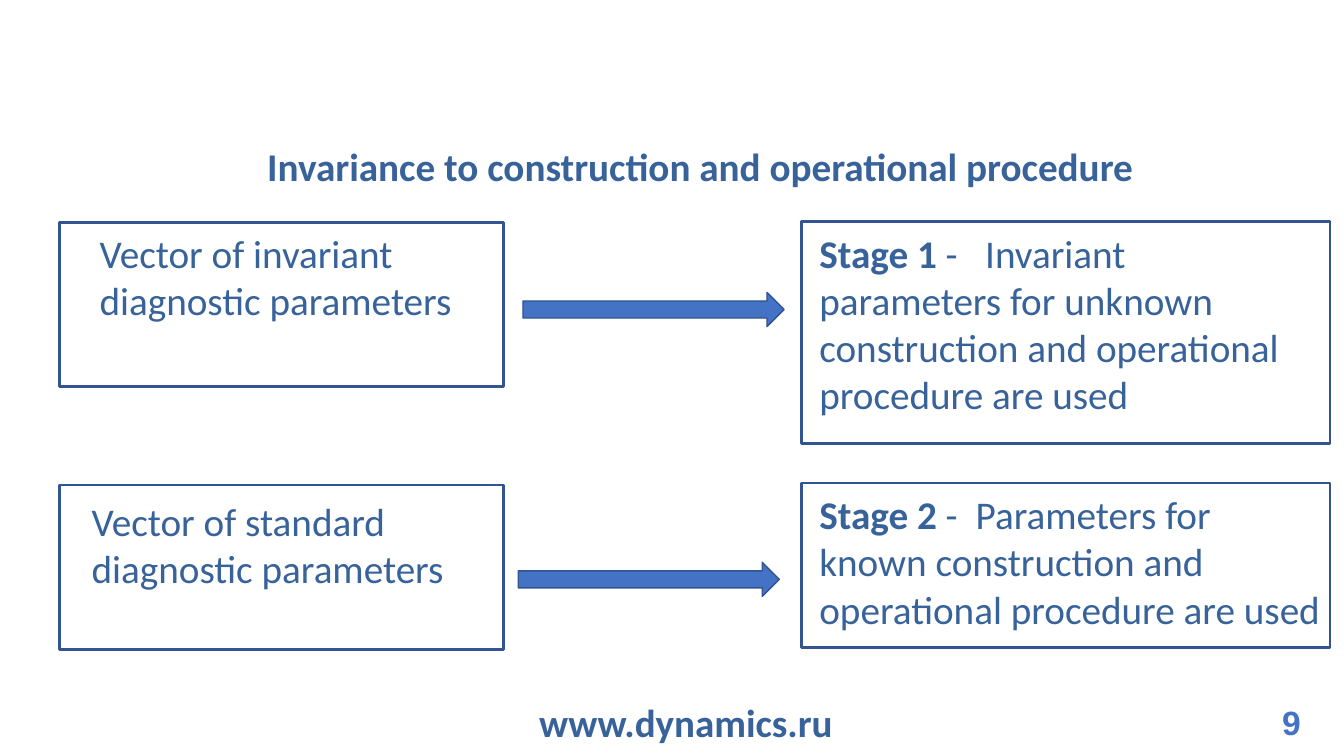
import pptx
import pptx.util
import pptx.dml.color
import pptx.enum.shapes
import pptx.enum.text
import lxml.etree
from pptx.util import Cm, Pt

NAVY, BLUE, OUTLINE, WHITE = "38629A", "4472C4", "325491", "FFFFFF"
BODY = {"name": "Calibri", "size": Pt(28), "bold": False}
HEAVY = {**BODY, "bold": True}


def paint(color_format, hex_value):
    color_format.rgb = pptx.dml.color.RGBColor.from_string(hex_value)


def add_words(paragraph, words, style, color=NAVY):
    run = paragraph.add_run()
    run.text = words
    for attribute, value in style.items():
        setattr(run.font, attribute, value)
    paint(run.font.color, color)


deck = pptx.Presentation()
deck.slide_width, deck.slide_height = Cm(33.87), Cm(19.05)
slide = deck.slides.add_slide(deck.slide_layouts[5])
shapes = slide.shapes

# Frames and block arrows: preset, left, top, width, height, fill, line width
frame = pptx.enum.shapes.MSO_SHAPE.RECTANGLE
arrow = pptx.enum.shapes.MSO_SHAPE.RIGHT_ARROW
for preset, left, top, width, height, fill, line_width in [
    (frame, 20.19, 5.59, 13.33, 5.59, WHITE, 2),
    (frame, 20.19, 12.17, 13.33, 4.14, WHITE, 2),
    (frame, 1.5, 5.61, 11.2, 4.14, WHITE, 2),
    (frame, 1.5, 12.22, 11.2, 4.14, WHITE, 2),
    (arrow, 13.06, 14.17, 6.58, 0.86, BLUE, 1),
    (arrow, 13.18, 7.37, 6.58, 0.86, BLUE, 1),
]:
    block = shapes.add_shape(preset, Cm(left), Cm(top), Cm(width), Cm(height))
    block.shadow.inherit = False
    block.fill.solid()
    paint(block.fill.fore_color, fill)
    paint(block.line.color, OUTLINE)
    block.line.width = Pt(line_width)

# Title
title = shapes.title
title.left, title.top, title.width, title.height = Cm(6.48), Cm(3.45), Cm(22.61), Cm(1.45)
title.text_frame.word_wrap = False
title.text_frame.vertical_anchor = pptx.enum.text.MSO_ANCHOR.TOP
heading = title.text_frame.paragraphs[0]
heading.alignment = pptx.enum.text.PP_ALIGN.LEFT
add_words(heading, "Invariance to construction and operational procedure", HEAVY)

# Vectors and stages: left, top, width, height, bold lead, tab stop, text
for left, top, width, height, lead, tab_stop, words in [
    (2.26, 5.66, 11.56, 2.64, "", 0, "Vector of invariant diagnostic parameters"),
    (2.06, 12.4, 11, 2.64, "", 0, "Vector of standard diagnostic parameters"),
    (20.4, 5.66, 12.32, 5.05, "Stage 1", 4.18,
     " -\tInvariant parameters for unknown construction and operational procedure are used"),
    (20.4, 12.24, 13.16, 3.84, "Stage 2", 3.94,
     " -\tParameters for known construction and operational procedure are used"),
]:
    label = shapes.add_textbox(Cm(left), Cm(top), Cm(width), Cm(height))
    label.text_frame.word_wrap = True
    paragraph = label.text_frame.paragraphs[0]
    if lead:
        properties = paragraph._p.get_or_add_pPr()
        tabs = lxml.etree.SubElement(properties, pptx.oxml.ns.qn("a:tabLst"))
        lxml.etree.SubElement(tabs, pptx.oxml.ns.qn("a:tab"), pos=str(Cm(tab_stop)), algn="l")
        add_words(paragraph, lead, HEAVY)
    add_words(paragraph, words, BODY)

# Web address
website = shapes.add_textbox(Cm(13.34), Cm(17.81), Cm(10.69), Cm(1.14))
website.text_frame.word_wrap = True
address = website.text_frame.paragraphs[0]
address.line_spacing = 0.7
add_words(address, "www.dynamics.ru", {**HEAVY, "size": Pt(27.9)})

# Page number
page = shapes.add_textbox(Cm(32.21), Cm(17.32), Cm(1.65), Cm(1.73))
for side in ("left", "top", "right", "bottom"):
    setattr(page.text_frame, f"margin_{side}", Cm(0.1))
page.text_frame.word_wrap = True
page.text_frame.vertical_anchor = pptx.enum.text.MSO_ANCHOR.MIDDLE
add_words(page.text_frame.paragraphs[0], "9",
          {"name": "Arial", "size": Pt(24), "bold": True}, BLUE)

deck.save("out.pptx")
